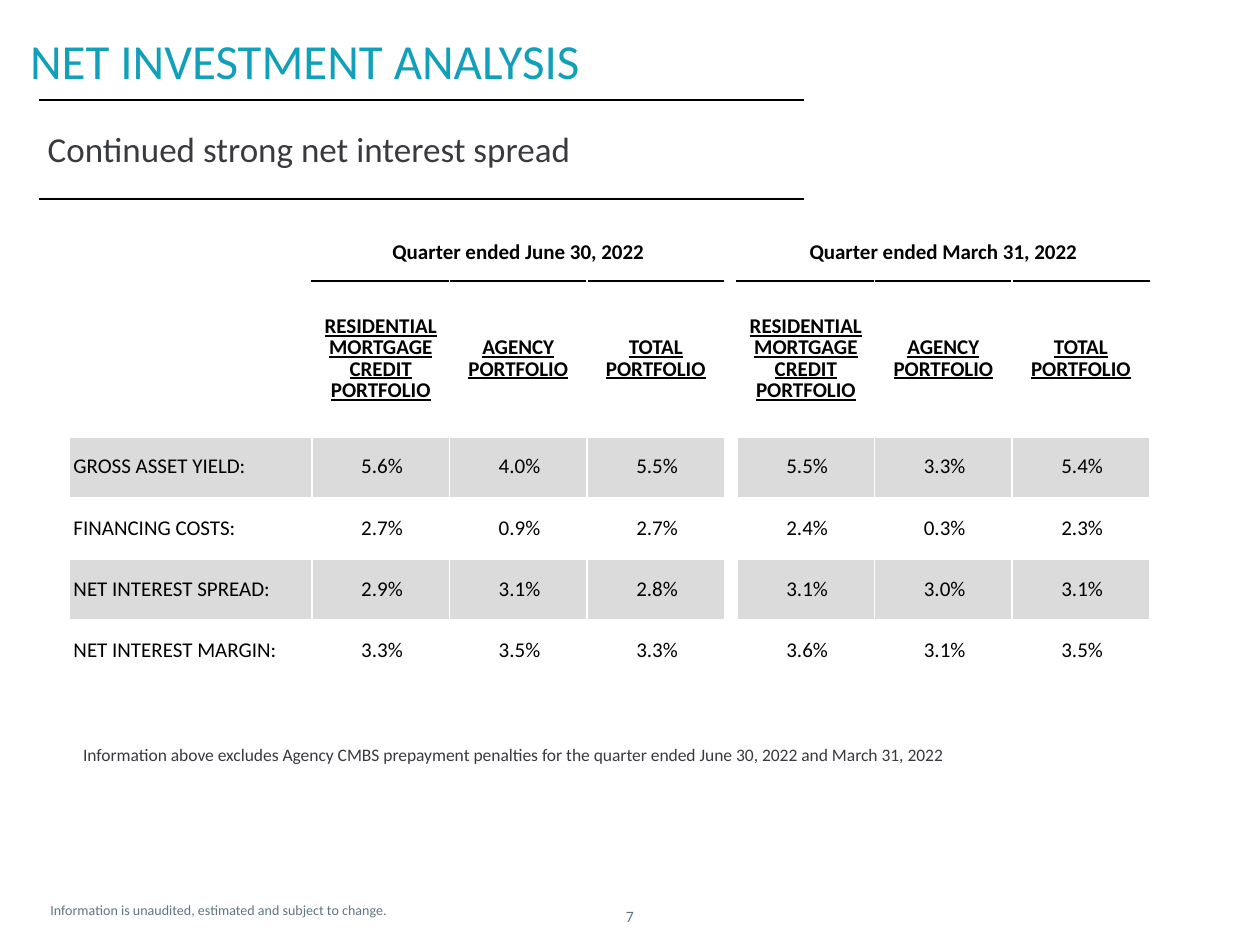
from lxml import etree
from pptx import Presentation
from pptx.dml.color import RGBColor
from pptx.enum import shapes, text
from pptx.oxml.ns import qn
from pptx.util import Pt

FONT = "Calibri"
BLACK, WHITE, BAND = "000000", "FFFFFF", "DBDBDB"
TEAL, DARK, SLATE = "11A0BA", "393A3F", "5E7582"
LEFT, CENTER = text.PP_ALIGN.LEFT, text.PP_ALIGN.CENTER
TOP, MIDDLE = text.MSO_ANCHOR.TOP, text.MSO_ANCHOR.MIDDLE

# text, (left, top, width, height), size, colour, alignment, anchor
TEXTS = [
    ("Information is unaudited, estimated and subject to change.",
     (23.8, 512.6, 278, 17.3), 8, SLATE, LEFT, TOP),
    ("7", (318.2, 519.8, 83.5, 10), 9, SLATE, CENTER, MIDDLE),
    ("Information above excludes Agency CMBS prepayment penalties for the "
     "quarter ended June 30, 2022 and March 31, 2022",
     (42.5, 422.6, 652.3, 33.8), 10, DARK, LEFT, TOP),
    ("NET INVESTMENT ANALYSIS", (12.2, 15.1, 673.2, 27.4), 28, TEAL, LEFT, TOP),
    ("Continued strong net interest spread",
     (22.3, 57.6, 437, 56.9), 20, DARK, LEFT, MIDDLE),
]
RULE_LEFT, RULE_RIGHT, RULE_TOPS = 22.3, 459.4, (57.2, 113.9)

QUARTERS = ["Quarter ended June 30, 2022", "Quarter ended March 31, 2022"]
PORTFOLIOS = ["RESIDENTIAL MORTGAGE CREDIT PORTFOLIO", "AGENCY PORTFOLIO",
              "TOTAL PORTFOLIO"]
YIELDS = [
    ("GROSS ASSET YIELD:", ("5.6%", "4.0%", "5.5%"), ("5.5%", "3.3%", "5.4%")),
    ("FINANCING COSTS:", ("2.7%", "0.9%", "2.7%"), ("2.4%", "0.3%", "2.3%")),
    ("NET INTEREST SPREAD:", ("2.9%", "3.1%", "2.8%"), ("3.1%", "3.0%", "3.1%")),
    ("NET INTEREST MARGIN:", ("3.3%", "3.5%", "3.3%"), ("3.6%", "3.1%", "3.5%")),
]
TABLE_LEFT, TABLE_TOP = 39.8, 128.2
LABEL_W, VALUE_W, GAP_W = 138.5, 78.6, 6.8
COL_WIDTHS = [LABEL_W] + [VALUE_W] * 3 + [GAP_W] + [VALUE_W] * 3
ROW_HEIGHTS = [32.4, 89.1] + [34.9] * len(YIELDS)
GAP_COL = 4


def rgb(color):
    return RGBColor.from_string(color)


def style(p, size, color, align, bold=False, underline=False):
    p.alignment = align
    f = p.font
    f.name, f.size, f.bold, f.underline = FONT, Pt(size), bold, underline
    f.color.rgb = rgb(color)
    for r in p.runs:
        r.font.name, r.font.size = FONT, Pt(size)
        r.font.bold, r.font.underline = bold, underline
        r.font.color.rgb = rgb(color)


def add_text(s, words, box, size, color, align, anchor):
    tf = s.shapes.add_textbox(*map(Pt, box)).text_frame
    tf.word_wrap = True
    tf.vertical_anchor = anchor
    tf.margin_left = tf.margin_right = tf.margin_bottom = Pt(5)
    tf.margin_top = Pt(2.5)
    tf.text = words
    style(tf.paragraphs[0], size, color, align)


def add_rule(s, y):
    c = s.shapes.add_connector(shapes.MSO_CONNECTOR.STRAIGHT,
                               Pt(RULE_LEFT), Pt(y), Pt(RULE_RIGHT), Pt(y))
    c.line.color.rgb = rgb(BLACK)
    c.line.width = Pt(1)
    etree.SubElement(c._element.spPr, qn("a:effectLst"))


def set_borders(cell, top, bottom):
    tc_pr = cell._tc.get_or_add_tcPr()
    for side, color in zip("LRTB", (WHITE, WHITE, top, bottom)):
        ln = etree.SubElement(tc_pr, qn("a:ln" + side), w=str(Pt(1)))
        fill = etree.SubElement(ln, qn("a:solidFill"))
        etree.SubElement(fill, qn("a:srgbClr"), val=color)


def add_yield_table(s):
    rows = [["", QUARTERS[0], "", "", "", QUARTERS[1], "", ""],
            ["", *PORTFOLIOS, "", *PORTFOLIOS]]
    rows += [[label, *june, "", *march] for label, june, march in YIELDS]
    table = s.shapes.add_table(len(rows), len(COL_WIDTHS), Pt(TABLE_LEFT), Pt(TABLE_TOP),
                               Pt(sum(COL_WIDTHS)), Pt(sum(ROW_HEIGHTS))).table
    table.first_row = table.horz_banding = False
    for column, width in zip(table.columns, COL_WIDTHS):
        column.width = Pt(width)
    for i, (row, height) in enumerate(zip(rows, ROW_HEIGHTS)):
        table.rows[i].height = Pt(height)
        for j, words in enumerate(row):
            cell = table.cell(i, j)
            is_value = i > 1 and j > 0
            under_quarter = j not in (0, GAP_COL)
            cell.margin_left = Pt(2.2)
            cell.margin_right = Pt(0.7 if is_value else 2.2)
            cell.margin_top = cell.margin_bottom = 0
            cell.vertical_anchor = MIDDLE
            set_borders(cell, BLACK if i == 1 and under_quarter else WHITE,
                        BLACK if i == 0 and under_quarter else WHITE)
            cell.fill.solid()
            banded = i > 1 and i % 2 == 0 and j != GAP_COL
            cell.fill.fore_color.rgb = rgb(BAND if banded else WHITE)
            cell.text = words
            p = cell.text_frame.paragraphs[0]
            p.line_spacing = 0.83
            style(p, 12, BLACK, CENTER if j else LEFT, bold=i < 2, underline=i == 1)
    for first in (1, GAP_COL + 1):
        table.cell(0, first).merge(table.cell(0, first + 2))


def main():
    prs = Presentation()
    prs.slide_width, prs.slide_height = Pt(720), Pt(540)
    s = prs.slides.add_slide(prs.slide_layouts[6])
    add_yield_table(s)
    for item in TEXTS:
        add_text(s, *item)
    for y in RULE_TOPS:
        add_rule(s, y)
    prs.save("out.pptx")


if __name__ == "__main__":
    main()
